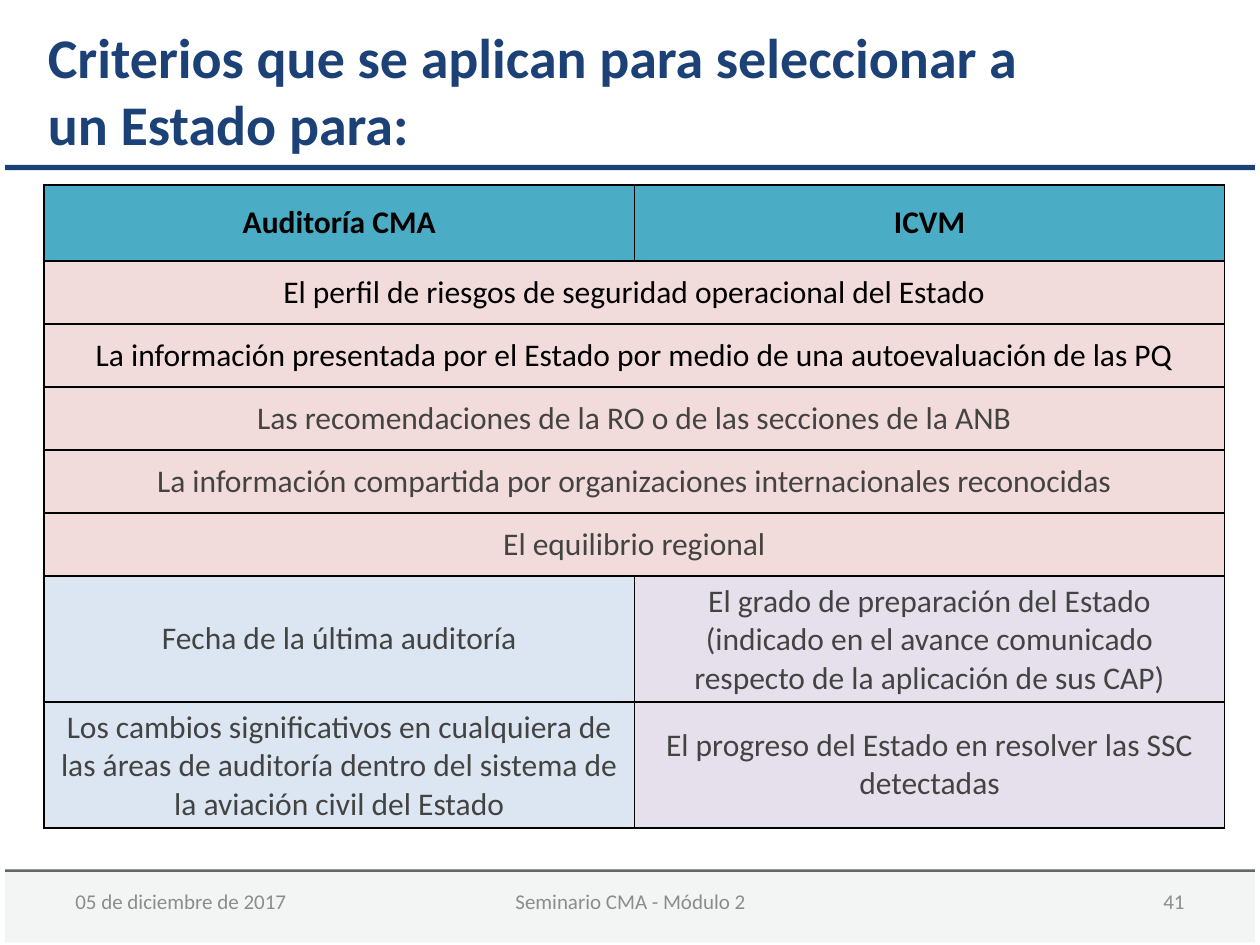
"""Build the slide on the criteria for selecting a State for an audit or an ICVM."""
from dataclasses import dataclass

from lxml.etree import SubElement
from pptx import Presentation
from pptx.dml.color import RGBColor
from pptx.enum.shapes import MSO_SHAPE
from pptx.enum.text import MSO_ANCHOR, MSO_AUTO_SIZE, PP_ALIGN
from pptx.oxml.ns import qn
from pptx.slide import Slide
from pptx.table import _Cell
from pptx.text.text import TextFrame
from pptx.util import Inches, Pt

GRID_COLUMNS, GRID_ROWS = 100, 75
SLIDE_WIDTH, SLIDE_HEIGHT = Inches(10), Inches(7.5)


@dataclass(frozen=True)
class Theme:
    font: str = "Calibri"
    navy: str = "1B4177"
    black: str = "000000"
    body: str = "434342"
    muted: str = "8C8C8C"
    band: str = "F3F4F4"
    rule: str = "666666"
    header: str = "4BACC6"
    shared: str = "F2DCDB"
    audit: str = "DCE6F2"
    icvm: str = "E6E0EC"
    title_size: int = 32
    table_size: int = 18
    footer_size: int = 12


@dataclass(frozen=True)
class Box:
    column: float
    row: float
    columns: float
    rows: float

    def lengths(self) -> tuple[int, int, int, int]:
        """Return left, top, width and height on the slide."""
        return (across(self.column), down(self.row), across(self.columns), down(self.rows))


@dataclass(frozen=True)
class Strip:
    box: Box
    color: str


@dataclass(frozen=True)
class FooterItem:
    box: Box
    text: str
    alignment: PP_ALIGN


@dataclass(frozen=True)
class CriteriaRow:
    texts: tuple[str, ...]
    fills: tuple[str, ...]
    rows: float
    color: str
    bold: bool = False


THEME = Theme()
TITLE = "Criterios que se aplican para seleccionar a un Estado para:"
TITLE_BOX = Box(2.8, 1.3, 79.5, 11.8)
TABLE_BOX = Box(3.5, 14.7, 93.7, 51.2)
STRIPS = (
    Strip(Box(0.4, 69, 99.2, 5.8), THEME.band),
    Strip(Box(0.4, 69, 99.2, 0.2), THEME.rule),
    Strip(Box(0.4, 13.1, 99.2, 0.4), THEME.navy),
)
FOOTER = (
    FooterItem(Box(5, 69.5, 23.3, 4), "05 de diciembre de 2017", PP_ALIGN.LEFT),
    FooterItem(Box(34.2, 69.5, 31.7, 4), "Seminario CMA - Módulo 2", PP_ALIGN.CENTER),
    FooterItem(Box(71.7, 69.5, 23.3, 4), "41", PP_ALIGN.RIGHT),
)


def shared_row(text: str, color: str = THEME.body) -> CriteriaRow:
    """Describe a criterion that spans both columns."""
    return CriteriaRow((text,), (THEME.shared,), 5, color)


def split_row(audit: str, icvm: str) -> CriteriaRow:
    """Describe one criterion for each column."""
    return CriteriaRow((audit, icvm), (THEME.audit, THEME.icvm), 10, THEME.body)


CRITERIA = (
    CriteriaRow(("Auditoría CMA", "ICVM"), (THEME.header, THEME.header), 6, THEME.black, True),
    shared_row("El perfil de riesgos de seguridad operacional del Estado", THEME.black),
    shared_row(
        "La información presentada por el Estado por medio de una autoevaluación de las PQ",
        THEME.black,
    ),
    shared_row("Las recomendaciones de la RO o de las secciones de la ANB"),
    shared_row("La información compartida por organizaciones internacionales reconocidas"),
    shared_row("El equilibrio regional"),
    split_row(
        "Fecha de la última auditoría",
        "El grado de preparación del Estado (indicado en el avance comunicado "
        "respecto de la aplicación de sus CAP)",
    ),
    split_row(
        "Los cambios significativos en cualquiera de las áreas de auditoría "
        "dentro del sistema de la aviación civil del Estado",
        "El progreso del Estado en resolver las SSC detectadas",
    ),
)


def across(columns: float) -> int:
    """Convert grid columns to a length."""
    return round(SLIDE_WIDTH * columns / GRID_COLUMNS)


def down(rows: float) -> int:
    """Convert grid rows to a length."""
    return round(SLIDE_HEIGHT * rows / GRID_ROWS)


def write_text(
    frame: TextFrame, text: str, size: int, color: str, alignment: PP_ALIGN, bold: bool = False
) -> None:
    """Write one formatted paragraph."""
    frame.word_wrap = True
    paragraph = frame.paragraphs[0]
    paragraph.text = text
    paragraph.alignment = alignment
    font = paragraph.font
    font.name, font.size, font.bold = THEME.font, Pt(size), bold
    font.color.rgb = RGBColor.from_string(color)


def draw_strip(slide: Slide, strip: Strip) -> None:
    """Draw a plain filled strip."""
    shape = slide.shapes.add_shape(MSO_SHAPE.RECTANGLE, *strip.box.lengths())
    shape.shadow.inherit = False
    shape.fill.solid()
    shape.fill.fore_color.rgb = RGBColor.from_string(strip.color)
    shape.line.fill.background()


def draw_title(slide: Slide) -> None:
    """Place and format the title placeholder."""
    title = slide.shapes.title
    title.left, title.top, title.width, title.height = TITLE_BOX.lengths()
    frame = title.text_frame
    frame.vertical_anchor = MSO_ANCHOR.TOP
    frame.auto_size = MSO_AUTO_SIZE.SHAPE_TO_FIT_TEXT
    write_text(frame, TITLE, THEME.title_size, THEME.navy, PP_ALIGN.LEFT, True)


def draw_footer_item(slide: Slide, item: FooterItem) -> None:
    """Draw one footer text."""
    frame = slide.shapes.add_textbox(*item.box.lengths()).text_frame
    frame.vertical_anchor = MSO_ANCHOR.MIDDLE
    write_text(frame, item.text, THEME.footer_size, THEME.muted, item.alignment)


def style_cell(cell: _Cell, color: str) -> None:
    """Give a cell thin borders and a solid fill."""
    properties = cell._tc.get_or_add_tcPr()
    for side in ("a:lnL", "a:lnR", "a:lnT", "a:lnB"):
        line = SubElement(properties, qn(side), w=str(Pt(1)))
        fill = SubElement(line, qn("a:solidFill"))
        SubElement(fill, qn("a:srgbClr"), val=THEME.black)
    cell.fill.solid()
    cell.fill.fore_color.rgb = RGBColor.from_string(color)
    cell.vertical_anchor = MSO_ANCHOR.MIDDLE


def draw_table(slide: Slide) -> None:
    """Draw the criteria table, merging the shared rows."""
    table = slide.shapes.add_table(len(CRITERIA), 2, *TABLE_BOX.lengths()).table
    table.horz_banding = table.first_row = False
    for index, criterion in enumerate(CRITERIA):
        table.rows[index].height = down(criterion.rows)
        cells = [table.cell(index, column) for column in range(2)]
        for cell, color in zip(cells, criterion.fills * (2 // len(criterion.fills))):
            style_cell(cell, color)
        if len(criterion.texts) == 1:
            cells[0].merge(cells[1])
        for cell, text in zip(cells, criterion.texts):
            write_text(cell.text_frame, text, THEME.table_size, criterion.color,
                       PP_ALIGN.CENTER, criterion.bold)


def main() -> None:
    """Assemble and save the slide."""
    presentation = Presentation()
    presentation.slide_width, presentation.slide_height = SLIDE_WIDTH, SLIDE_HEIGHT
    slide = presentation.slides.add_slide(presentation.slide_layouts[5])
    for strip in STRIPS:
        draw_strip(slide, strip)
    draw_table(slide)
    draw_title(slide)
    for item in FOOTER:
        draw_footer_item(slide, item)
    presentation.save("out.pptx")


if __name__ == "__main__":
    main()
